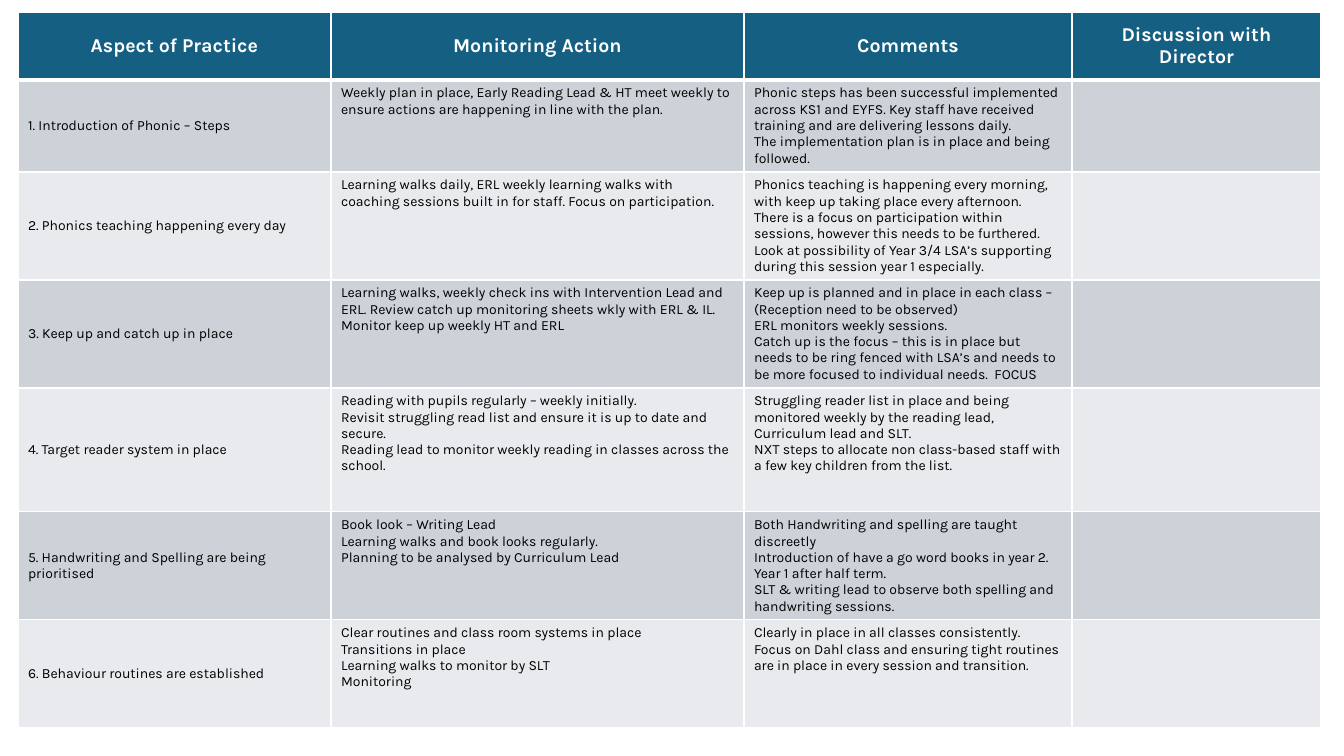
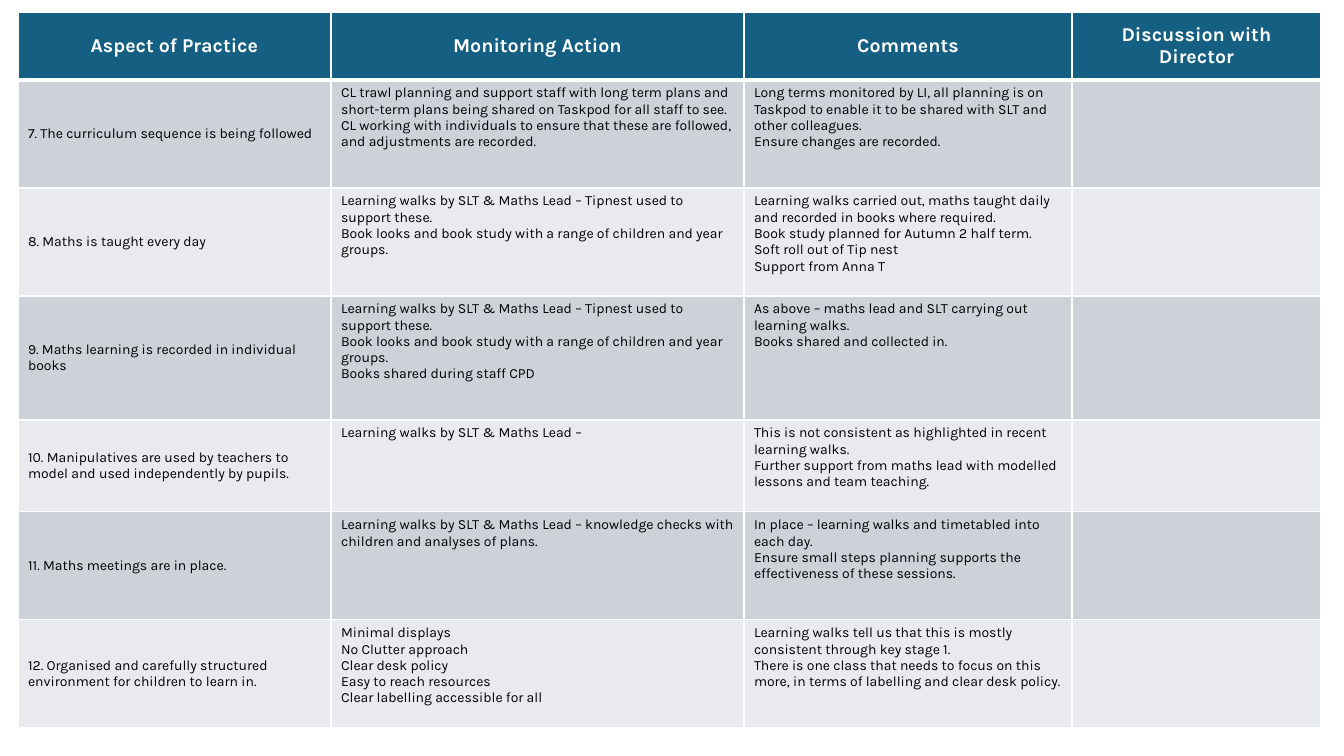
from lxml.etree import SubElement
from pptx import Presentation
from pptx.dml.color import RGBColor
from pptx.enum.text import MSO_ANCHOR, PP_ALIGN
from pptx.oxml.ns import qn
from pptx.util import Pt

# Shared style
EMU_PER_PX = 914400 / 100.8
FONT = "Karla"
WHITE, BLACK, TEAL = "FFFFFF", "000000", "156082"
BANDS = ("CCD2D8", "E8EAED")
TABLE_BOX = (18, 12, 1303, 716)
COLUMN_WIDTHS = (313, 413, 328, 249)
HEADER_HEIGHT = 68
HEADINGS = ("Aspect of Practice", "Monitoring Action", "Comments", "Discussion with Director")

# Each row: height, aspect, monitoring actions, comments
READING_ROWS = [
    (92, "1. Introduction of Phonic – Steps",
     ["Weekly plan in place, Early Reading Lead & HT meet weekly to ensure actions are "
      "happening in line with the plan."],
     ["Phonic steps has been successful implemented across KS1 and EYFS. Key staff have "
      "received training and are delivering lessons daily.",
      "The implementation plan is in place and being followed."]),
    (108, "2. Phonics teaching happening every day",
     ["Learning walks daily, ERL weekly learning walks with coaching sessions built in for "
      "staff. Focus on participation."],
     ["Phonics teaching is happening every morning, with keep up taking place every afternoon.",
      "There is a focus on participation within sessions, however this needs to be furthered. "
      "Look at possibility of Year 3/4 LSA’s supporting during this session year 1 especially."]),
    (108, "3. Keep up and catch up in place",
     ["Learning walks, weekly check ins with Intervention Lead and ERL. Review catch up "
      "monitoring sheets wkly with ERL & IL.",
      "Monitor keep up weekly HT and ERL"],
     ["Keep up is planned and in place in each class – (Reception need to be observed)",
      "ERL monitors weekly sessions.",
      "Catch up is the focus – this is in place but needs to be ring fenced with LSA’s and "
      "needs to be more focused to individual needs.  FOCUS"]),
    (124, "4. Target reader system in place",
     ["Reading with pupils regularly – weekly initially.",
      "Revisit struggling read list and ensure it is up to date and secure.",
      "Reading lead to monitor weekly reading in classes across the school."],
     ["Struggling reader list in place and being monitored weekly by the reading lead, "
      "Curriculum lead and SLT.",
      "NXT steps to allocate non class-based staff with a few key children from the list."]),
    (108, "5. Handwriting and Spelling are being prioritised",
     ["Book look – Writing Lead",
      "Learning walks and book looks regularly.",
      "Planning to be analysed by Curriculum Lead"],
     ["Both Handwriting and spelling are taught discreetly",
      "Introduction of have a go word books in year 2.",
      "Year 1 after half term.",
      "SLT & writing lead to observe both spelling and handwriting sessions."]),
    (108, "6. Behaviour routines are established",
     ["Clear routines and class room systems in place",
      "Transitions in place",
      "Learning walks to monitor by SLT",
      "Monitoring"],
     ["Clearly in place in all classes consistently.",
      "Focus on Dahl class and ensuring tight routines are in place in every session and "
      "transition."]),
]

MATHS_WALKS = [
    "Learning walks by SLT & Maths Lead – Tipnest used to support these.",
    "Book looks and book study with a range of children and year groups.",
]
MATHS_ROWS = [
    (108, "7. The curriculum sequence is being followed",
     ["CL trawl planning and support staff with long term plans and short-term plans being "
      "shared on Taskpod for all staff to see.",
      "CL working with individuals to ensure that these are followed, and adjustments are "
      "recorded."],
     ["Long terms monitored by LI, all planning is on Taskpod to enable it to be shared with "
      "SLT and other colleagues.",
      "Ensure changes are recorded."]),
    (108, "8. Maths is taught every day",
     MATHS_WALKS,
     ["Learning walks carried out, maths taught daily and recorded in books where required.",
      "Book study planned for Autumn 2 half term.",
      "Soft roll out of Tip nest",
      "Support from Anna T"]),
    (124, "9. Maths learning is recorded in individual books",
     MATHS_WALKS + ["Books shared during staff CPD"],
     ["As above – maths lead and SLT carrying out learning walks.",
      "Books shared and collected in."]),
    (92, "10. Manipulatives are used by teachers to model and used independently by pupils.",
     ["Learning walks by SLT & Maths Lead –"],
     ["This is not consistent as highlighted in recent learning walks.",
      "Further support from maths lead with modelled lessons and team teaching."]),
    (108, "11. Maths meetings are in place.",
     ["Learning walks by SLT & Maths Lead – knowledge checks with children and analyses of "
      "plans."],
     ["In place – learning walks and timetabled into each day.",
      "Ensure small steps planning supports the effectiveness of these sessions."]),
    (108, "12. Organised and carefully structured environment for children to learn in.",
     ["Minimal displays",
      "No Clutter approach",
      "Clear desk policy",
      "Easy to reach resources",
      "Clear labelling accessible for all"],
     ["Learning walks tell us that this is mostly consistent through key stage 1.",
      "There is one class that needs to focus on this more, in terms of labelling and clear "
      "desk policy."]),
]


def px(length):
    return round(length * EMU_PER_PX)


def color(hex_value):
    return RGBColor.from_string(hex_value)


def write_text(frame, lines, size=10, ink=BLACK, bold=False, align=PP_ALIGN.LEFT):
    for index, line in enumerate(lines):
        para = frame.paragraphs[0] if index == 0 else frame.add_paragraph()
        para.alignment = align
        span = para.add_run()
        span.text = line
        span.font.name = FONT
        span.font.size = Pt(size)
        span.font.bold = bold
        span.font.color.rgb = color(ink)


def style_cell(cell, fill, top=1, bottom=1, anchor=MSO_ANCHOR.TOP):
    properties = cell._tc.get_or_add_tcPr()
    # Borders go before the fill in the cell properties
    for side, width in (("L", 1), ("R", 1), ("T", top), ("B", bottom)):
        line = SubElement(properties, qn(f"a:ln{side}"), w=str(Pt(width)))
        SubElement(SubElement(line, qn("a:solidFill")), qn("a:srgbClr"), val=WHITE)
    cell.fill.solid()
    cell.fill.fore_color.rgb = color(fill)
    cell.vertical_anchor = anchor


def add_monitoring_table(page, box, rows):
    left, top, width, height = map(px, box)
    table = page.shapes.add_table(
        len(rows) + 1, len(HEADINGS), left, top, width, height).table
    table.horz_banding = False
    for column, column_width in zip(table.columns, COLUMN_WIDTHS):
        column.width = px(column_width)

    # Header
    table.rows[0].height = px(HEADER_HEIGHT)
    for cell, heading in zip(table.rows[0].cells, HEADINGS):
        style_cell(cell, TEAL, bottom=3, anchor=MSO_ANCHOR.MIDDLE)
        write_text(cell.text_frame, [heading], size=14, ink=WHITE, bold=True,
                   align=PP_ALIGN.CENTER)

    # Body, in alternating bands
    for index, (row_height, aspect, actions, comments) in enumerate(rows):
        row = table.rows[index + 1]
        row.height = px(row_height)
        for position, (cell, lines) in enumerate(
                zip(row.cells, ([aspect], actions, comments, []))):
            style_cell(cell, BANDS[index % 2], top=3 if index == 0 else 1,
                       anchor=MSO_ANCHOR.MIDDLE if position == 0 else MSO_ANCHOR.TOP)
            write_text(cell.text_frame, lines)


def main():
    deck = Presentation()
    deck.slide_width, deck.slide_height = px(1344), px(756)
    blank_layout = deck.slide_layouts[6]
    for rows in (READING_ROWS, MATHS_ROWS):
        page = deck.slides.add_slide(blank_layout)
        add_monitoring_table(page, TABLE_BOX, rows)
    deck.save("out.pptx")


if __name__ == "__main__":
    main()
